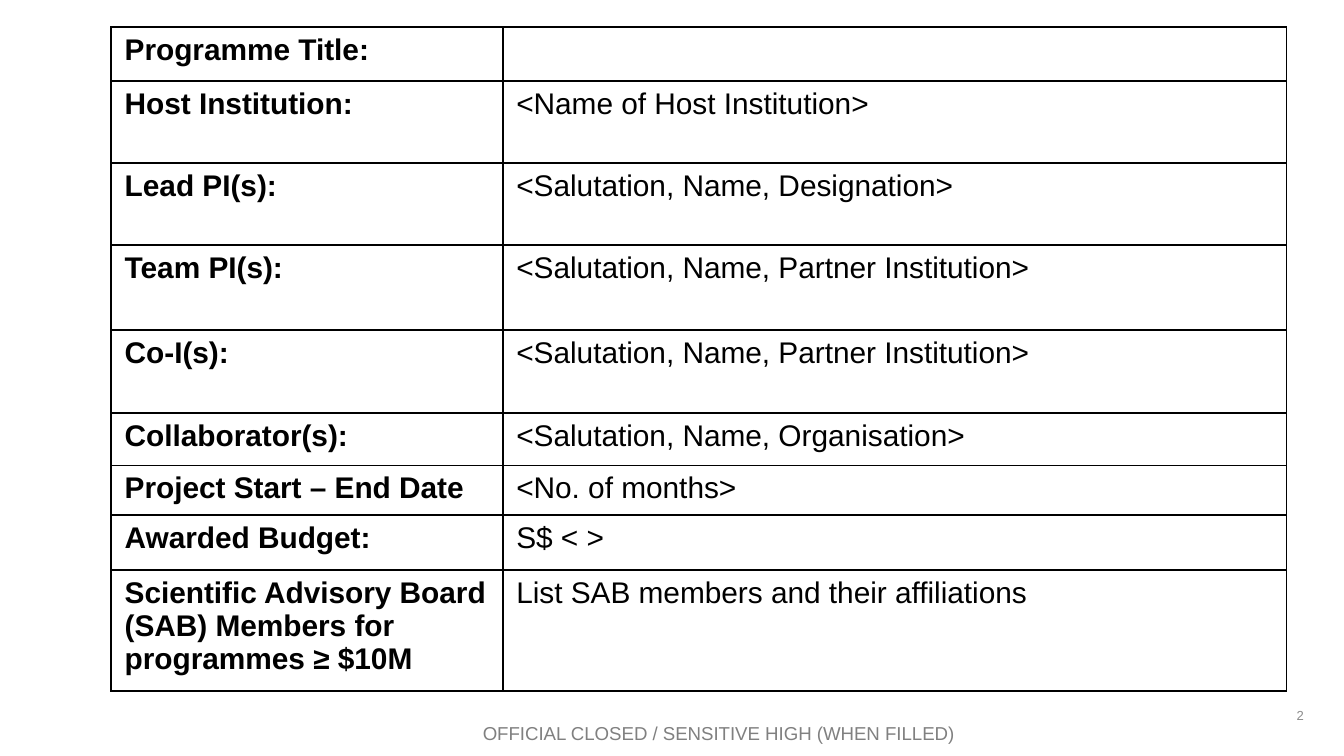
from lxml.etree import SubElement
from pptx import Presentation
from pptx.dml.color import RGBColor
from pptx.enum.text import MSO_ANCHOR as Anchor, PP_ALIGN as Align
from pptx.oxml.ns import qn
from pptx.util import Pt

BLACK = RGBColor(0, 0, 0)
GREY = RGBColor(0x80, 0x80, 0x80)
PALE = RGBColor(0x8C, 0x8C, 0x8C)
FONT = "Arial"

# label, entry, row height in points
ROWS = [
    ("Programme Title:", "", 28),
    ("Host Institution:", "<Name of Host Institution>", 44),
    ("Lead PI(s):", "<Salutation, Name, Designation>", 44),
    ("Team PI(s):", "<Salutation, Name, Partner Institution>", 45.5),
    ("Co-I(s):", "<Salutation, Name, Partner Institution>", 44.5),
    ("Collaborator(s):", "<Salutation, Name, Organisation>", 28),
    ("Project Start – End Date", "<No. of months>", 26.5),
    ("Awarded Budget:", "S$ < >", 29.5),
    ("Scientific Advisory Board (SAB) Members for programmes ≥ $10M",
     "List SAB members and their affiliations", 65),
]
COLS = (209.8, 419.8)
LEFT, TOP = 59.6, 14.5

# text, box, size, colour, alignment, anchor
NOTES = [
    ("2", (537.8, 372.2, 167.8, 21.6), 7, PALE, Align.RIGHT, Anchor.MIDDLE),
    ("OFFICIAL CLOSED / SENSITIVE HIGH (WHEN FILLED)",
     (49, 383, 671.8, 19.4), 10, GREY, Align.CENTER, Anchor.TOP),
]


def write(frame, text, size, color, bold=False):
    para = frame.paragraphs[0]
    run = para.add_run()
    run.text = text
    font = run.font
    font.name, font.size, font.bold = FONT, Pt(size), bold
    font.color.rgb = color
    return para


def frame_cell(cell):
    """Clear the cell's fill and rule all four sides."""
    props = cell._tc.get_or_add_tcPr()
    for side in ("a:lnL", "a:lnR", "a:lnT", "a:lnB"):
        line = SubElement(props, qn(side), w=str(Pt(1)))
        fill = SubElement(line, qn("a:solidFill"))
        SubElement(fill, qn("a:srgbClr"), val=str(BLACK))
    cell.fill.background()


def add_grid(slide):
    high = sum(row[2] for row in ROWS)
    grid = slide.shapes.add_table(len(ROWS), len(COLS), Pt(LEFT), Pt(TOP),
                                  Pt(sum(COLS)), Pt(high)).table
    grid.first_row = grid.horz_banding = False
    for col, wide in zip(grid.columns, COLS):
        col.width = Pt(wide)
    for r, (label, entry, tall) in enumerate(ROWS):
        grid.rows[r].height = Pt(tall)
        for c, text in enumerate((label, entry)):
            cell = grid.cell(r, c)
            write(cell.text_frame, text, 16, BLACK, bold=c == 0)
            frame_cell(cell)


def add_note(slide, text, box, size, color, align, anchor):
    frame = slide.shapes.add_textbox(*map(Pt, box)).text_frame
    frame.word_wrap = True
    frame.vertical_anchor = anchor
    write(frame, text, size, color).alignment = align


def main():
    deck = Presentation()
    deck.slide_width, deck.slide_height = Pt(720), Pt(405)
    slide = deck.slides.add_slide(deck.slide_layouts[6])
    for note in NOTES:
        add_note(slide, *note)
    add_grid(slide)
    deck.save("out.pptx")


if __name__ == "__main__":
    main()
